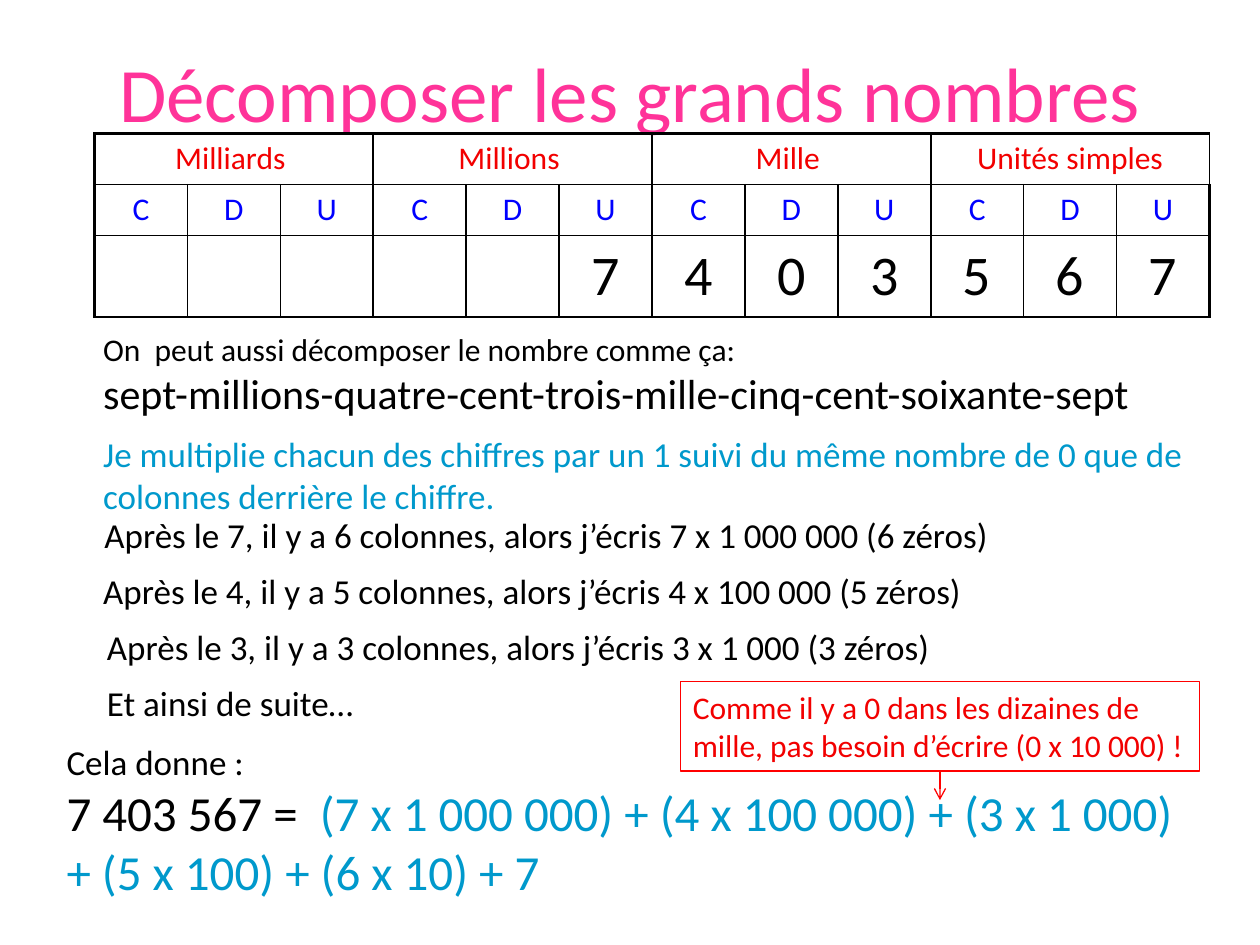
from dataclasses import dataclass

from pptx import Presentation
from pptx.dml.color import RGBColor
from pptx.enum.shapes import MSO_CONNECTOR as Connector, MSO_SHAPE as Preset
from pptx.enum.text import MSO_ANCHOR as Anchor, MSO_AUTO_SIZE as AutoSize, PP_ALIGN as Align
from pptx.oxml import parse_xml
from pptx.oxml.ns import nsdecls
from pptx.util import Inches, Pt

COLUMNS, ROWS = 100, 75
WIDTH, HEIGHT = Inches(10), Inches(7.5)


@dataclass(frozen=True)
class Theme:
    """Colours, type sizes and line widths of the slide."""
    font: str = "Calibri"
    title: str = "FF3399"
    period: str = "F20000"
    rank: str = "0000FF"
    ink: str = "000000"
    accent: str = "0099CC"
    outline: str = "FF0000"
    title_size: int = 44
    digit_size: int = 32
    result_size: int = 28
    words_size: int = 24
    body_size: int = 20
    small_size: int = 18
    thin: float = 1
    thick: float = 1.5
    outline_width: float = 0.75


THEME = Theme()


@dataclass(frozen=True)
class Box:
    """A rectangle in columns and rows of the slide grid."""
    left: float
    top: float
    width: float
    height: float

    def inner(self, left, top, width, height):
        """Return a box placed from this box's corner."""
        return Box(self.left + left, self.top + top, width, height)

    def lengths(self):
        """Return left, top, width and height as slide lengths."""
        column, row = WIDTH / COLUMNS, HEIGHT / ROWS
        return (round(self.left * column), round(self.top * row),
                round(self.width * column), round(self.height * row))


def write(paragraph, text, size=THEME.body_size, color=THEME.ink, align=None):
    """Add a formatted run to a paragraph."""
    run = paragraph.add_run()
    run.text = text
    run.font.name = THEME.font
    run.font.size = Pt(size)
    run.font.color.rgb = RGBColor.from_string(color)
    if align is not None:
        paragraph.alignment = align


def add_text(slide, box, text, **style):
    """Add a wrapping text box and return its frame."""
    frame = slide.shapes.add_textbox(*box.lengths()).text_frame
    frame.word_wrap = True
    frame.auto_size = AutoSize.SHAPE_TO_FIT_TEXT
    write(frame.paragraphs[0], text, **style)
    return frame


def add_title(slide, box, text):
    """Fill and place the title placeholder."""
    title = slide.shapes.title
    title.left, title.top, title.width, title.height = box.lengths()
    frame = title.text_frame
    frame.auto_size = AutoSize.NONE
    frame.vertical_anchor = Anchor.MIDDLE
    write(frame.paragraphs[0], text, size=THEME.title_size, color=THEME.title, align=Align.CENTER)


def style_cell(cell, widths):
    """Draw a cell's borders and clear its fill."""
    properties = cell._tc.get_or_add_tcPr()
    for side, width in zip("LRTB", widths):
        properties.append(parse_xml(
            f'<a:ln{side} {nsdecls("a")} w="{Pt(width)}"><a:solidFill>'
            f'<a:srgbClr val="{THEME.ink}"/></a:solidFill></a:ln{side}>'))
    cell.fill.background()
    cell.vertical_anchor = Anchor.MIDDLE


def add_place_values(slide, box, periods, ranks, number):
    """Add the place value table with the number aligned to the right."""
    group = len(ranks)
    count = group * len(periods)
    heights = (4.05, 4.05, 6.45)
    table = slide.shapes.add_table(len(heights), count, *box.lengths()).table
    table.first_row = table.horz_banding = False
    for row, height in zip(table.rows, heights):
        row.height = round(height * HEIGHT / ROWS)
    for column in table.columns:
        column.width = round(box.width * WIDTH / COLUMNS / count)
    for index in range(count):
        left = THEME.thick if index % group == 0 else THEME.thin
        right = THEME.thick if index % group == group - 1 else THEME.thin
        for row in range(len(heights)):
            top = THEME.thick if row == 0 else THEME.thin
            bottom = THEME.thick if row == len(heights) - 1 else THEME.thin
            style_cell(table.cell(row, index), (left, right, top, bottom))
    for index, period in enumerate(periods):
        cell = table.cell(0, index * group)
        cell.merge(table.cell(0, index * group + group - 1))
        write(cell.text_frame.paragraphs[0], period, size=THEME.small_size,
              color=THEME.period, align=Align.CENTER)
    for index, digit in enumerate(number.rjust(count)):
        write(table.cell(1, index).text_frame.paragraphs[0], ranks[index % group],
              size=THEME.small_size, color=THEME.rank, align=Align.CENTER)
        if digit.strip():
            write(table.cell(2, index).text_frame.paragraphs[0], digit,
                  size=THEME.digit_size, align=Align.CENTER)


def add_method(slide, box, intro, words, rule, steps):
    """Add the number in words, the rule and its evenly spaced steps."""
    frame = add_text(slide, box.inner(0, 0, box.width, 8.1), intro, size=THEME.small_size)
    write(frame.add_paragraph(), words, size=THEME.words_size)
    add_text(slide, box.inner(0, 8.1, box.width, 7.7), rule, color=THEME.accent)
    for index, (indent, step) in enumerate(steps):
        add_text(slide, box.inner(indent, 14.6 + 4.43 * index, box.width, 4.4), step)


def add_result(slide, box, intro, number, terms):
    """Add the final decomposition."""
    frame = add_text(slide, box, intro)
    paragraph = frame.add_paragraph()
    write(paragraph, number, size=THEME.result_size)
    write(paragraph, terms, size=THEME.result_size, color=THEME.accent)


def outline(line):
    """Apply the callout's line style."""
    line.color.rgb = RGBColor.from_string(THEME.outline)
    line.width = Pt(THEME.outline_width)


def add_callout(slide, box, text, arrow_length):
    """Add a framed remark with an arrow pointing down from it."""
    frame_shape = slide.shapes.add_shape(Preset.RECTANGLE, *box.lengths())
    frame_shape.shadow.inherit = False
    frame_shape.fill.background()
    outline(frame_shape.line)
    frame = frame_shape.text_frame
    frame.word_wrap = True
    frame.vertical_anchor = Anchor.TOP
    frame.auto_size = AutoSize.SHAPE_TO_FIT_TEXT
    write(frame.paragraphs[0], text, size=THEME.small_size, color=THEME.period, align=Align.LEFT)

    left, top, _, height = box.inner(box.width / 2, box.height, 0, arrow_length).lengths()
    arrow = slide.shapes.add_connector(Connector.STRAIGHT, left, top, left, top + height)
    arrow.begin_connect(frame_shape, 2)
    outline(arrow.line)
    arrow.line._get_or_add_ln().append(parse_xml(f'<a:tailEnd {nsdecls("a")} type="arrow"/>'))
    arrow._element.spPr.append(parse_xml(f'<a:effectLst {nsdecls("a")}/>'))


def main():
    """Build and save the slide."""
    presentation = Presentation()
    presentation.slide_width, presentation.slide_height = WIDTH, HEIGHT
    slide = presentation.slides.add_slide(presentation.slide_layouts[5])
    add_title(slide, Box(5, 3, 90, 8.5), "Décomposer les grands nombres")
    add_place_values(slide, Box(7.5, 10.6, 88.5, 14.55),
                     ("Milliards ", "Millions ", "Mille ", "Unités simples"), "CDU", "7403567")
    add_method(
        slide, Box(7.2, 25.7, 88.2, 32.3),
        "On  peut aussi décomposer le nombre comme ça:",
        "sept-millions-quatre-cent-trois-mille-cinq-cent-soixante-sept",
        "Je multiplie chacun des chiffres par un 1 suivi du même nombre de 0 "
        "que de colonnes derrière le chiffre.",
        ((0.1, "Après le 7, il y a 6 colonnes, alors j’écris 7 x 1 000 000 (6 zéros)"),
         (0, "Après le 4, il y a 5 colonnes, alors j’écris 4 x 100 000 (5 zéros)"),
         (0.3, "Après le 3, il y a 3 colonnes, alors j’écris 3 x 1 000 (3 zéros)"),
         (0.3, "Et ainsi de suite…")))
    add_result(slide, Box(4.3, 58.3, 91.3, 13.8), "Cela donne :", "7 403 567 =  ",
               "(7 x 1 000 000) + (4 x 100 000) + (3 x 1 000) + (5 x 100) + (6 x 10) + 7")
    add_callout(slide, Box(54, 54.1, 41.2, 7.1),
                "Comme il y a 0 dans les dizaines de mille, pas besoin d’écrire (0 x 10 000) !", 2.3)
    presentation.save("out.pptx")


if __name__ == "__main__":
    main()
